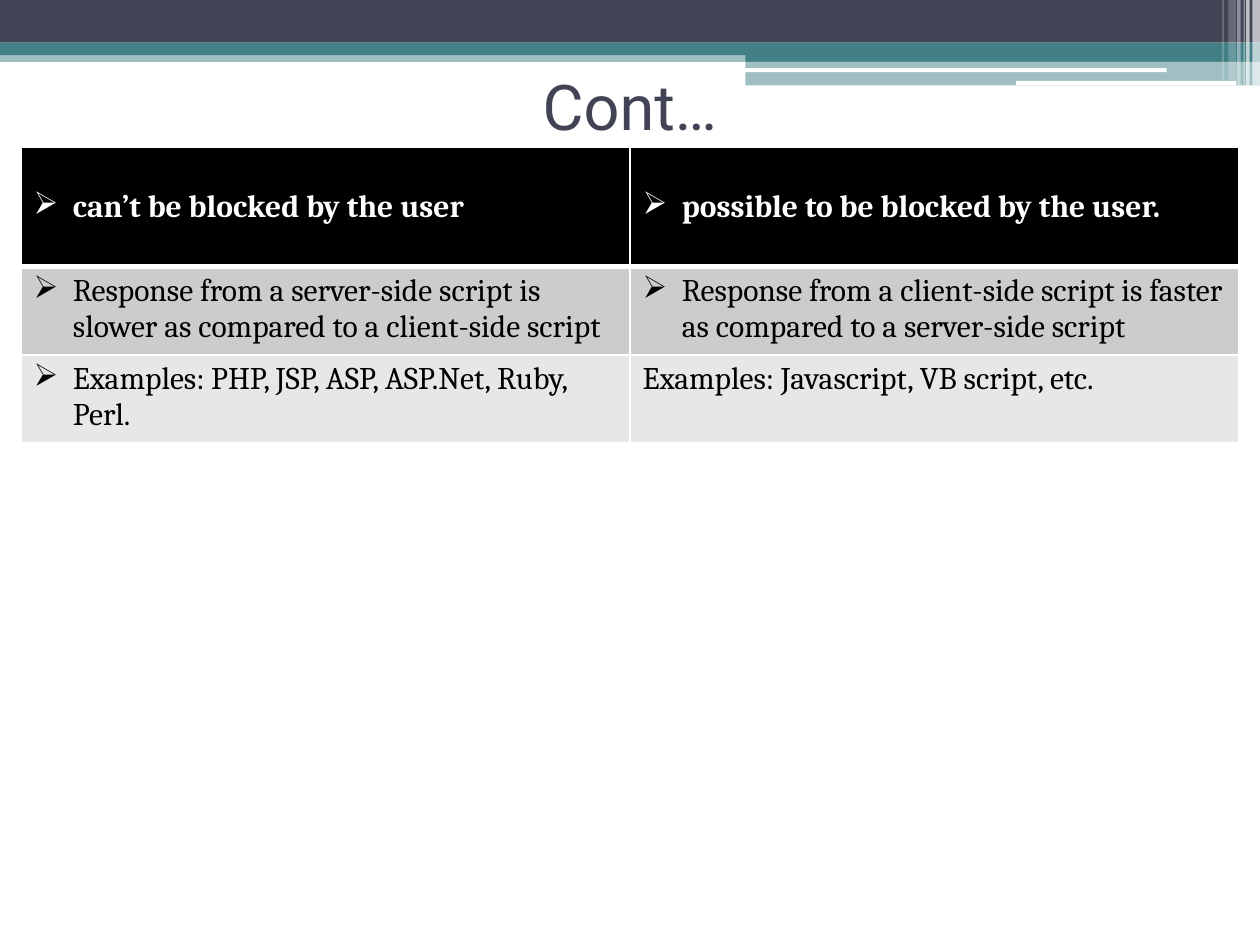
from lxml.etree import SubElement
from pptx import Presentation
from pptx.dml.color import RGBColor
from pptx.enum.shapes import MSO_SHAPE
from pptx.enum.text import MSO_ANCHOR, PP_ALIGN
from pptx.oxml import parse_xml
from pptx.oxml.ns import nsdecls, qn
from pptx.util import Pt

NAVY = RGBColor(0x42, 0x44, 0x56)
TEAL = RGBColor(0x43, 0x80, 0x86)
WHITE = RGBColor(0xFF, 0xFF, 0xFF)
BLACK = RGBColor(0, 0, 0)
MID_GREY = RGBColor(0xCC, 0xCC, 0xCC)
LIGHT_GREY = RGBColor(0xE7, 0xE7, 0xE7)

# left, top, width, height, colour, opacity in percent
BANDS = [
    (0, 28.8, 720, 6.6, TEAL, 50),
    (0, 0, 720, 24.4, NAVY, 100),
    (0, 24.4, 720, 7.2, TEAL, 100),
    (426, 28.2, 294, 7, TEAL, 100),
    (426, 34.9, 294, 14, TEAL, 50),
]
# left, top, width, height
HIGHLIGHTS = [(425.5, 39, 241.2, 2.2), (580.5, 46.2, 126, 2.6)]
# left, width, height, opacity in percent
STRIPES = [
    (715.6, 4.4, 48.9, 65),
    (712.1, 2, 48.9, 65),
    (710.6, 0.7, 48.9, 60),
    (707, 2, 48.9, 40),
    (702, 4.3, 46, 20),
    (698.5, 0.7, 46, 30),
]

BULLET = "➢"
# height, fill, text colour, bold, cells as (text, bulleted)
ROWS = [
    (68.4, BLACK, WHITE, True,
     [("can’t be blocked by the user", True),
      ("possible to be blocked by the user.", True)]),
    (49, MID_GREY, BLACK, False,
     [("Response from a server-side script is slower as compared to a client-side script", True),
      ("Response from a client-side script is faster as compared to a server-side script", True)]),
    (49, LIGHT_GREY, BLACK, False,
     [("Examples: PHP, JSP, ASP, ASP.Net, Ruby, Perl.", True),
      ("Examples: Javascript, VB script, etc.", False)]),
]


def write(tf, text, *, font, size, color, bold=False, align=PP_ALIGN.LEFT, bullet=None):
    p = tf.paragraphs[0]
    p.alignment = align
    if bullet:
        pPr = p._p.get_or_add_pPr()
        pPr.set("marL", str(Pt(22.5)))
        pPr.set("indent", str(-Pt(22.5)))
        SubElement(pPr, qn("a:buChar")).set("char", bullet)
    r = p.add_run()
    r.text = text
    r.font.name = font
    r.font.size = Pt(size)
    r.font.bold = bold
    r.font.color.rgb = color


def set_borders(cell, **widths):
    """Draw white cell borders; widths in points, keyed L, R, T, B."""
    tcPr = cell._tc.get_or_add_tcPr()
    for i, side in enumerate("LRTB"):
        tcPr.insert(i, parse_xml(
            f'<a:ln{side} {nsdecls("a")} w="{Pt(widths[side])}"><a:solidFill>'
            f'<a:srgbClr val="{WHITE}"/></a:solidFill></a:ln{side}>'))


class Deck:
    title_font = "Roboto"
    body_font = "Cambria"

    def __init__(self, prs):
        self.s = prs.slides.add_slide(prs.slide_layouts[6])

    def bar(self, left, top, width, height, color, opacity=100, kind=MSO_SHAPE.RECTANGLE):
        sp = self.s.shapes.add_shape(kind, Pt(left), Pt(top), Pt(width), Pt(height))
        sp.shadow.inherit = False
        sp.line.fill.background()
        sp.fill.solid()
        sp.fill.fore_color.rgb = color
        if opacity < 100:
            clr = sp.fill._xPr.find(qn("a:solidFill"))[0]
            SubElement(clr, qn("a:alpha")).set("val", str(opacity * 1000))

    def title(self, text, left, top, width, height):
        sp = self.s.shapes.add_textbox(Pt(left), Pt(top), Pt(width), Pt(height))
        tf = sp.text_frame
        tf.word_wrap = True
        tf.vertical_anchor = MSO_ANCHOR.MIDDLE
        write(tf, text, font=self.title_font, size=36, color=NAVY, align=PP_ALIGN.CENTER)

    def table(self, rows, left, top, width):
        total = sum(row[0] for row in rows)
        columns = len(rows[0][-1])
        table = self.s.shapes.add_table(
            len(rows), columns, Pt(left), Pt(top), Pt(width), Pt(total)).table
        for i, (height, fill, color, bold, cells) in enumerate(rows):
            table.rows[i].height = Pt(height)
            for j, (text, bulleted) in enumerate(cells):
                cell = table.cell(i, j)
                cell.fill.solid()
                cell.fill.fore_color.rgb = fill
                cell.vertical_anchor = MSO_ANCHOR.MIDDLE if i == 0 else MSO_ANCHOR.TOP
                set_borders(cell, L=1, R=1, T=3 if i == 1 else 1, B=3 if i == 0 else 1)
                write(cell.text_frame, text, font=self.body_font, size=18, color=color,
                      bold=bold, bullet=BULLET if bulleted else None)


def main():
    prs = Presentation()
    prs.slide_width, prs.slide_height = Pt(720), Pt(540)
    deck = Deck(prs)
    for band in BANDS:
        deck.bar(*band)
    for box in HIGHLIGHTS:
        deck.bar(*box, WHITE, kind=MSO_SHAPE.ROUNDED_RECTANGLE)
    for left, width, height, opacity in STRIPES:
        deck.bar(left, 0, width, height, WHITE, opacity)
    deck.title("Cont…", 12, 36, 696, 48)
    deck.table(ROWS, 12, 84, 696)
    prs.save("out.pptx")


if __name__ == "__main__":
    main()
